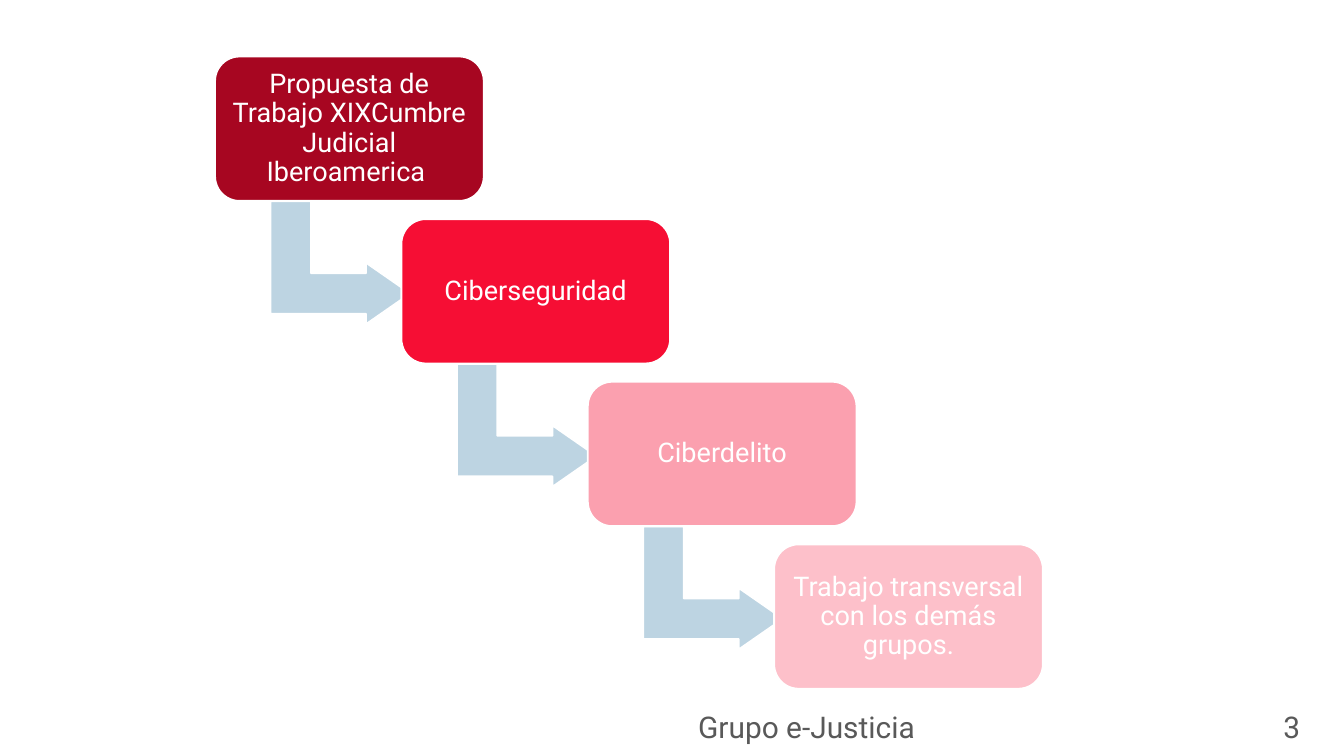
from pptx import Presentation
from pptx.dml.color import RGBColor
from pptx.enum.shapes import MSO_SHAPE
from pptx.enum.text import MSO_ANCHOR, PP_ALIGN
from pptx.util import Inches, Pt

FONT = "Roboto"
COLORS = {
    "white": "FFFFFF",
    "gray": "595959",
    "arrow": "BDD4E2",
    "wine": "A70621",
    "red": "F60E34",
    "rose": "FBA0AF",
    "pink": "FDC0CA",
}
STEPS = [
    ("Propuesta de Trabajo XIXCumbre Judicial Iberoamerica ", "wine"),
    ("Ciberseguridad", "red"),
    ("Ciberdelito", "rose"),
    ("Trabajo transversal con los demás grupos.", "pink"),
]


def get_color(name):
    """Return the named colour."""
    return RGBColor.from_string(COLORS[name])


def add_run(para, text, size, color):
    """Add one styled run to a paragraph."""
    run = para.add_run()
    run.text = text
    run.font.name = FONT
    run.font.size = Pt(size)
    run.font.color.rgb = get_color(color)


def add_form(slide, kind, box, fill):
    """Add a filled preset shape with a white outline."""
    form = slide.shapes.add_shape(kind, *map(Inches, box))
    form.shadow.inherit = False
    form.fill.solid()
    form.fill.fore_color.rgb = get_color(fill)
    form.line.color.rgb = get_color("white")
    form.line.width = Pt(2)
    return form


def add_arrow(slide, left, top):
    """Add the bent arrow that leads from a step to the next."""
    box = (left + 0.95, top + 2.03, 1.83, 2.08)
    arrow = add_form(slide, MSO_SHAPE.BENT_UP_ARROW, box, "arrow")
    arrow.rotation = 90
    for i, value in enumerate((0.33, 0.25, 0.36)):
        arrow.adjustments[i] = value


def add_step(slide, box, text, fill):
    """Add a rounded step with centred text."""
    card = add_form(slide, MSO_SHAPE.ROUNDED_RECTANGLE, box, fill)
    card.adjustments[0] = 0.17
    frame = card.text_frame
    frame.word_wrap = True
    frame.vertical_anchor = MSO_ANCHOR.MIDDLE
    frame.margin_left = frame.margin_right = Inches(0.12)
    frame.margin_top = frame.margin_bottom = Inches(0.12)
    para = frame.paragraphs[0]
    para.alignment = PP_ALIGN.CENTER
    para.line_spacing = 0.9
    para.space_after = Pt(10)
    add_run(para, text, 29, "white")


def add_stairs(slide, left, top, width, height):
    """Add the descending steps and arrows inside the given box."""
    wide, high = 4, 2.15
    last = len(STEPS) - 1
    across, down = (width - wide) / last, (height - high) / last
    for i, (text, fill) in enumerate(STEPS):
        x, y = left + i * across, top + i * down
        if i < last:
            add_arrow(slide, x, y)
        add_step(slide, (x, y, wide, high), text, fill)


def add_label(slide, box, text):
    """Add one footer label."""
    frame = slide.shapes.add_textbox(*map(Inches, box)).text_frame
    frame.word_wrap = True
    add_run(frame.paragraphs[0], text, 32, "gray")


def add_footer(slide, left, top, width, height):
    """Add the group name and the page number inside the given box."""
    page = 0.99
    add_label(slide, (left, top, 8.5, height), "Grupo e-Justicia")
    add_label(slide, (left + width - page, top, page, height), "3")


def main():
    """Build and save the slide."""
    deck = Presentation()
    deck.slide_width, deck.slide_height = Inches(20), Inches(11.25)
    slide = deck.slides.add_slide(deck.slide_layouts[6])
    add_footer(slide, 10.29, 10.49, 9.7, 0.6)
    add_stairs(slide, 3.2, 0.84, 12.32, 9.41)
    deck.save("out.pptx")


if __name__ == "__main__":
    main()
